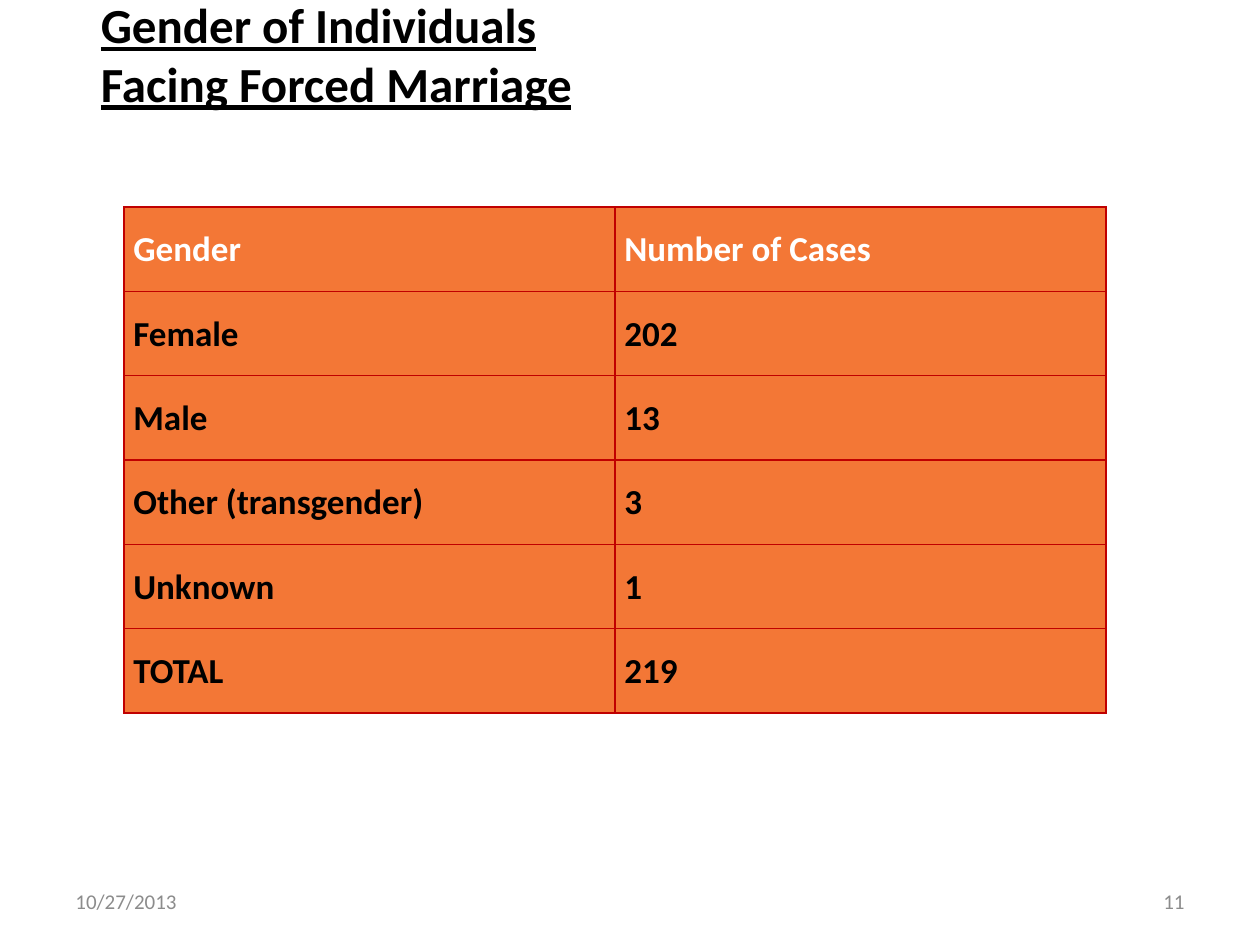
from lxml import etree
from pptx import Presentation
from pptx.dml.color import RGBColor
from pptx.enum.text import MSO_ANCHOR, MSO_AUTO_SIZE, PP_ALIGN
from pptx.oxml.ns import qn
from pptx.util import Pt

LEFT, RIGHT, JUSTIFY = PP_ALIGN.LEFT, PP_ALIGN.RIGHT, PP_ALIGN.JUSTIFY
TOP, MIDDLE = MSO_ANCHOR.TOP, MSO_ANCHOR.MIDDLE
NO_AUTOFIT = MSO_AUTO_SIZE.NONE

BLACK = RGBColor(0x00, 0x00, 0x00)
WHITE = RGBColor(0xFF, 0xFF, 0xFF)
GREY = RGBColor(0x8C, 0x8C, 0x8C)
ORANGE = RGBColor(0xF3, 0x77, 0x36)
RED = RGBColor(0xC0, 0x00, 0x00)

TITLE_LINES = ["Gender of Individuals", "Facing Forced Marriage"]
CASES = [
    ("Gender", "Number of Cases"),
    ("Female", "202"),
    ("Male", "13"),
    ("Other (transgender)", "3"),
    ("Unknown", "1"),
    ("TOTAL", "219"),
]
FOOTERS = [("10/27/2013", 36, LEFT), ("11", 516, RIGHT)]

TITLE_FONT = {"name": "Calibri", "size": Pt(28), "bold": True, "underline": True}
TABLE_FONT = {"name": "Calibri", "size": Pt(20), "bold": True}
FOOTER_FONT = {"name": "Calibri", "size": Pt(12)}

TITLE_BOX = (14.4, -6.5, 323.3, 108.7)
TITLE_INDENT = 36
TABLE_LEFT, TABLE_TOP = 70.8, 118.3
COLUMN_WIDTH, ROW_HEIGHT = 280.6, 48.2
FOOTER_TOP, FOOTER_WIDTH, FOOTER_HEIGHT = 500.5, 168, 28.75


def format_font(font, values, color):
    for key, value in values.items():
        setattr(font, key, value)
    font.color.rgb = color


def add_borders(cell):
    properties = cell._tc.get_or_add_tcPr()
    for position, side in enumerate(("lnL", "lnR", "lnT", "lnB")):
        line = etree.Element(qn(f"a:{side}"), w=str(Pt(1)))
        fill = etree.SubElement(line, qn("a:solidFill"))
        etree.SubElement(fill, qn("a:srgbClr"), val=str(RED))
        properties.insert(position, line)


def add_title(slide):
    title = slide.shapes.title
    title.left, title.top, title.width, title.height = map(Pt, TITLE_BOX)
    frame = title.text_frame
    frame.auto_size = NO_AUTOFIT
    frame.word_wrap = False
    frame.vertical_anchor = TOP
    frame.text = "\n".join(TITLE_LINES)
    for paragraph in frame.paragraphs:
        paragraph.alignment = LEFT
        paragraph._p.get_or_add_pPr().set("indent", str(Pt(TITLE_INDENT)))
        format_font(paragraph.font, TITLE_FONT, BLACK)


def add_cases_table(slide):
    rows, columns = len(CASES), len(CASES[0])
    table = slide.shapes.add_table(
        rows, columns, Pt(TABLE_LEFT), Pt(TABLE_TOP),
        Pt(COLUMN_WIDTH * columns), Pt(ROW_HEIGHT * rows)).table
    for r, values in enumerate(CASES):
        for c, value in enumerate(values):
            cell = table.cell(r, c)
            cell.text = value
            cell.margin_left = cell.margin_right = Pt(5.4)
            cell.margin_top = cell.margin_bottom = 0
            cell.fill.solid()
            cell.fill.fore_color.rgb = ORANGE
            add_borders(cell)
            paragraph = cell.text_frame.paragraphs[0]
            paragraph.alignment = JUSTIFY
            paragraph.line_spacing = 1.5
            format_font(paragraph.font, TABLE_FONT, BLACK if r else WHITE)


def add_footers(slide):
    for text, left, alignment in FOOTERS:
        frame = slide.shapes.add_textbox(
            Pt(left), Pt(FOOTER_TOP), Pt(FOOTER_WIDTH), Pt(FOOTER_HEIGHT)).text_frame
        frame.word_wrap = True
        frame.vertical_anchor = MIDDLE
        frame.text = text
        paragraph = frame.paragraphs[0]
        paragraph.alignment = alignment
        format_font(paragraph.font, FOOTER_FONT, GREY)


def main():
    presentation = Presentation()
    presentation.slide_width, presentation.slide_height = Pt(720), Pt(540)
    slide = presentation.slides.add_slide(presentation.slide_layouts[5])
    add_title(slide)
    add_cases_table(slide)
    add_footers(slide)
    presentation.save("out.pptx")


if __name__ == "__main__":
    main()
